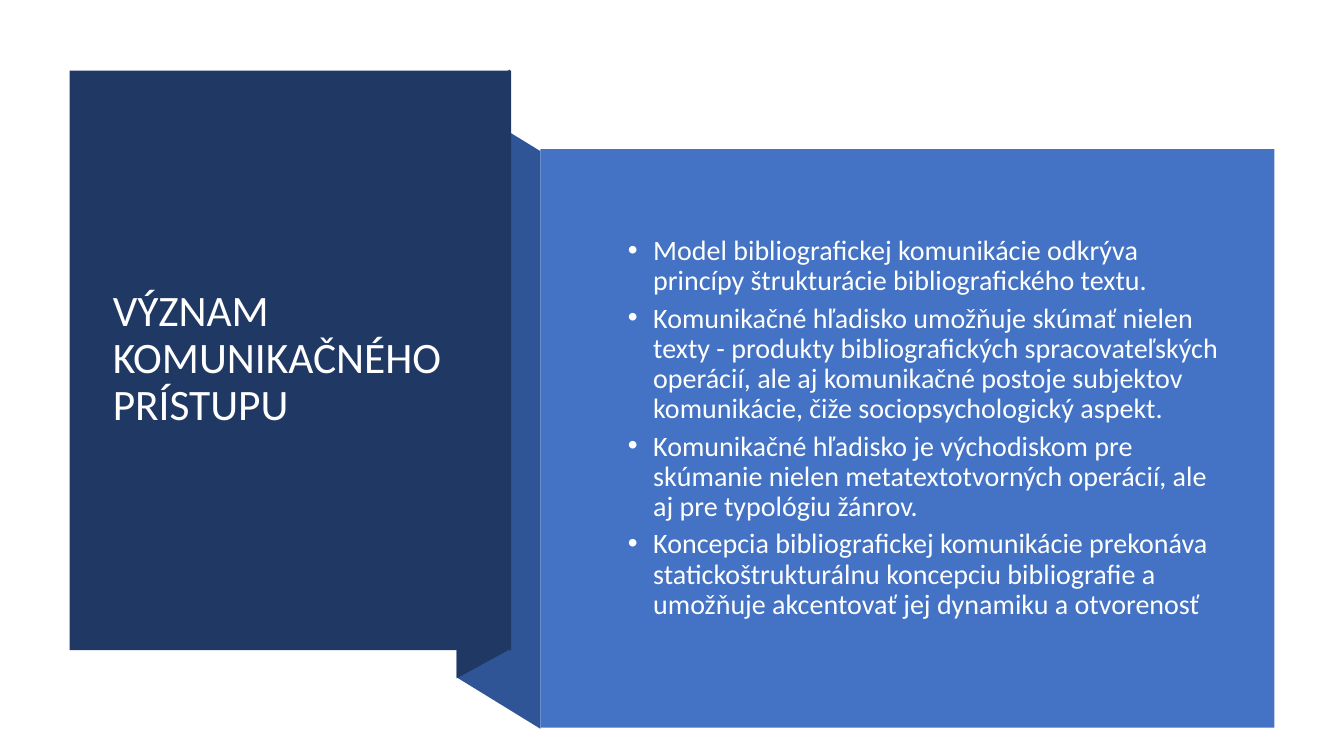
from pptx import Presentation
from pptx import util as u
from pptx.dml.color import RGBColor
from pptx.enum import shapes, text
from pptx.oxml.ns import qn
from lxml import etree

NAVY, FOLD_BLUE, PANEL_BLUE = "203864", "2F5597", "4472C4"
TITLE = "VÝZNAM KOMUNIKAČNÉHO PRÍSTUPU"
POINTS = [
    "Model bibliografickej komunikácie odkrýva princípy štrukturácie bibliografického textu.",
    "Komunikačné hľadisko umožňuje skúmať nielen texty - produkty bibliografických "
    "spracovateľských operácií, ale aj komunikačné postoje subjektov komunikácie, "
    "čiže sociopsychologický aspekt.",
    "Komunikačné hľadisko je východiskom pre skúmanie nielen metatextotvorných operácií, "
    "ale aj pre typológiu žánrov.",
    "Koncepcia bibliografickej komunikácie prekonáva statickoštrukturálnu koncepciu "
    "bibliografie a umožňuje akcentovať jej dynamiku a otvorenosť",
]


def color(hex_value):
    return RGBColor.from_string(hex_value)


def paint(block, fill):
    block.shadow.inherit = False
    block.fill.solid()
    block.fill.fore_color.rgb = color(fill)
    block.line.fill.background()


def add_panel(slide, box, fill):
    panel = slide.shapes.add_shape(
        shapes.MSO_SHAPE.RECTANGLE, *(u.Inches(n) for n in box))
    paint(panel, fill)


def add_fold(slide, corners, fill):
    start, *rest = [(u.Inches(x), u.Inches(y)) for x, y in corners]
    outline = slide.shapes.build_freeform(*start)
    outline.add_line_segments(rest, close=True)
    paint(outline.convert_to_shape(), fill)


def add_bullet(paragraph):
    properties = paragraph._p.get_or_add_pPr()
    properties.set("marL", str(u.Inches(0.67)))
    properties.set("indent", str(u.Inches(-0.25)))
    etree.SubElement(properties, qn("a:buFont"), typeface="Arial")
    etree.SubElement(properties, qn("a:buChar"), char="•")


def add_text(slide, box, lines, size, ink, space_before=0, bulleted=False):
    frame = slide.shapes.add_textbox(*(u.Inches(n) for n in box)).text_frame
    frame.word_wrap = True
    frame.vertical_anchor = text.MSO_ANCHOR.MIDDLE
    frame.text = "\n".join(lines)
    font_format = {"name": "Calibri", "size": u.Pt(size)}
    spacing = {"line_spacing": 0.9, "space_before": u.Pt(space_before)}
    for paragraph in frame.paragraphs:
        for key, value in spacing.items():
            setattr(paragraph, key, value)
        font = paragraph.runs[0].font
        for key, value in font_format.items():
            setattr(font, key, value)
        font.color.rgb = color(ink)
        if bulleted:
            add_bullet(paragraph)


def main():
    deck = Presentation()
    deck.slide_width, deck.slide_height = u.Inches(13.33), u.Inches(7.5)
    slide = deck.slides.add_slide(deck.slide_layouts[6])

    add_fold(slide, [(5.36, 7.23), (4.53, 6.72), (4.53, 0.99), (5.36, 1.5)], FOLD_BLUE)
    add_fold(slide, [(5.06, 6.44), (4.53, 6.73), (4.53, 0.98), (5.06, 0.69)], NAVY)
    add_panel(slide, (0.69, 0.7, 4.38, 5.75), NAVY)
    add_text(slide, (1.02, 1.07, 3.71, 4.99), [TITLE], 31, "FFFFFF")
    add_panel(slide, (5.36, 1.48, 7.28, 5.74), PANEL_BLUE)
    add_text(slide, (5.71, 1.88, 6.51, 4.74), POINTS, 20, "FEFFFF",
             space_before=5, bulleted=True)

    deck.save("out.pptx")


if __name__ == "__main__":
    main()
